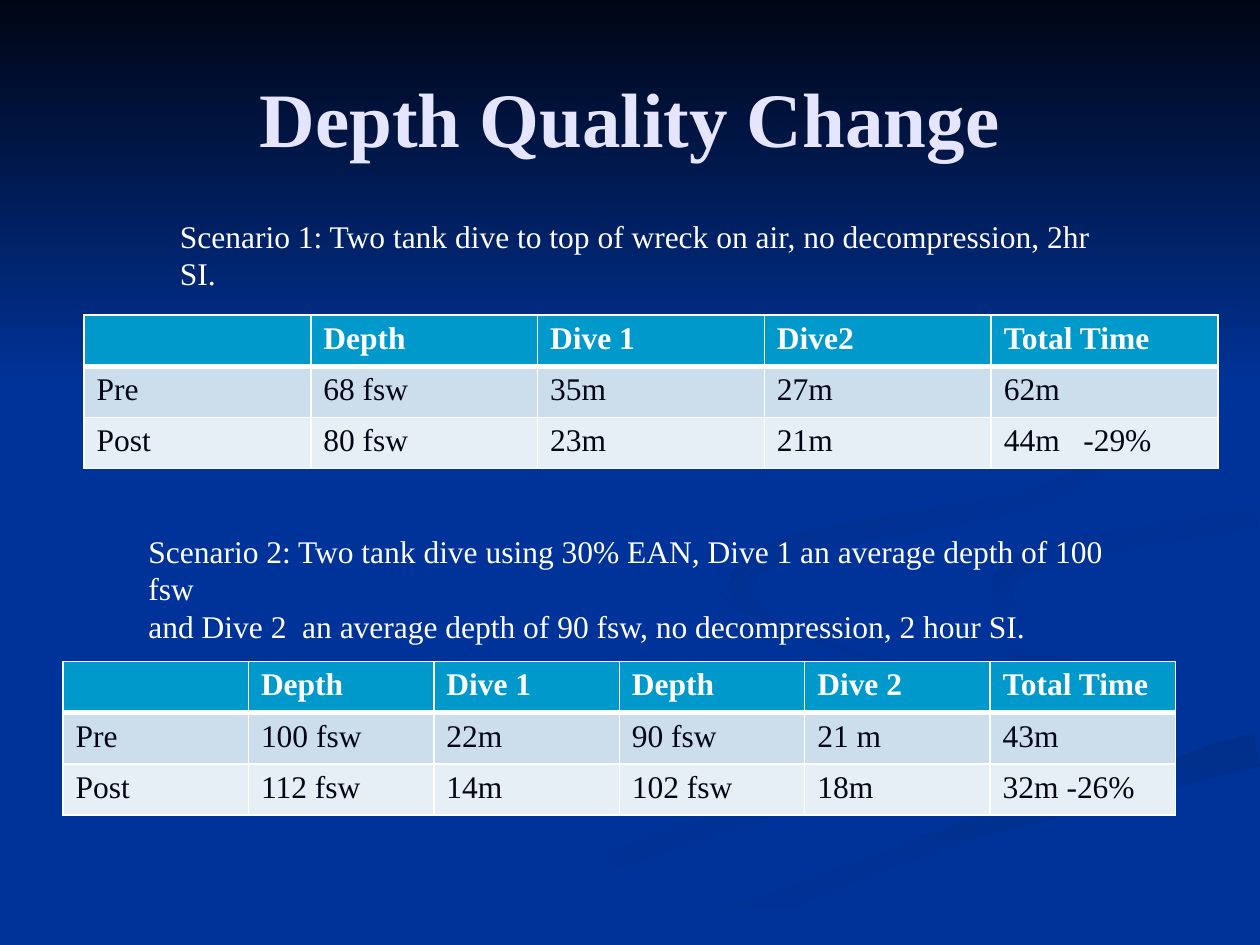
from math import hypot

from pptx import Presentation
from pptx.dml.color import RGBColor
from pptx.enum.shapes import MSO_SHAPE
from pptx.enum.text import MSO_ANCHOR, PP_ALIGN
from pptx.oxml import parse_xml
from pptx.oxml.ns import nsdecls
from pptx.util import Inches, Pt

WIDTH, HEIGHT = 10, 7.5
MARGIN = WIDTH * 0.05
FONT = "Times New Roman"
BODY_SIZE, TITLE_SIZE = 18, 44
SEA, NIGHT, WHITE, LAVENDER = "003399", "000514", "FFFFFF", "E5E5FF"
ROW_FILLS = ["0099CC", "CCDEEC", "E7EFF6"]
TABLE_HEIGHT = 1.22
THIN, THICK = 1, 3
CURVE_STEPS = 6

LOWER_SWIRL = [(5.75, 4.6, 0), (5.78, 4.76, 0.06), (6.4, 5.05, 0.06), (7.4, 5.39, 0.03),
               (7.9, 5.68, 0.12), (7.6, 6, 0.2), (5.5, 6.6, 0.18), (3.3, 7.45, 0.28)]
RIGHT_SWIRL = [(7.24, 4.64, 0), (7.35, 4.87, 0.05), (8.35, 5.27, 0.16),
               (9.1, 5.53, 0.2), (9.29, 5.78, 0.26), (8.94, 6.05, 0)]
CORNER_SWEEP = [(5.35, 7.47, 0.3), (7.1, 6.75, 0.25), (8.4, 6.36, 0.24), (9.98, 5.95, 0.28)]
SEA_SWEEP = [(9.98, 3.95, 0.15), (8.9, 4.11, 0.13), (7.7, 4.45, 0.4), (7.8, 4.85, 0.4),
             (9, 5.25, 0.25), (9.65, 5.65, 0.4), (8, 6.33, 0.12), (4.9, 7.45, 0.12)]
RIGHT_CURL = [(8.26, 4.96, 0), (7.95, 4.75, 0.16), (8.25, 4.42, 0.18), (9.98, 4.11, 0.18)]
UPPER_SWIRL = [(7.62, 2.33, 0), (8.7, 2.95, 0.08), (8.91, 3.4, 0.06), (8.3, 3.92, 0.16),
               (6.4, 4.31, 0.18), (5.86, 4.64, 0.16), (6.22, 5, 0)]
RIBBONS = [
    (LOWER_SWIRL, SEA, "003193", 0), (RIGHT_SWIRL, SEA, "003193", 45),
    (CORNER_SWEEP, "002F8C", SEA, 90), (SEA_SWEEP, SEA, SEA, 0),
    (RIGHT_CURL, "003091", SEA, 45), (UPPER_SWIRL, "002F8E", SEA, 45)]

AIR_DIVES = [
    ["", "Depth", "Dive 1", "Dive2", "Total Time"],
    ["Pre", "68 fsw", "35m", "27m", "62m"],
    ["Post", "80 fsw", "23m", "21m", "44m   -29%"]]
NITROX_DIVES = [
    ["", "Depth", "Dive 1", "Depth", "Dive 2", "Total Time"],
    ["Pre", "100 fsw", "22m", "90 fsw", "21 m", "43m"],
    ["Post", "112 fsw", "14m", "102 fsw", "18m", "32m -26%"]]


def colour(code):
    """Turn a hex string into a colour."""
    return RGBColor.from_string(code)


def paint(shape, start, end, angle):
    """Fill a shape with a clockwise-angled gradient, or plainly if its ends match."""
    shape.shadow.inherit = False
    shape.line.fill.background()
    if start == end:
        shape.fill.solid()
        shape.fill.fore_color.rgb = colour(start)
        return
    shape.fill.gradient()
    shape.fill.gradient_angle = (360 - angle) % 360
    for stop, code in zip(shape.fill.gradient_stops, (start, end)):
        stop.color.rgb = colour(code)


def blend(before, start, end, after, share):
    """Interpolate between start and end on a Catmull-Rom curve."""
    return start + share / 2 * (
        end - before
        + share * (2 * before - 5 * start + 4 * end - after)
        + share ** 2 * (3 * (start - end) + after - before))


def smooth(knots):
    """Return a curve through knots of x, y and thickness."""
    padded = [knots[0], *knots, knots[-1]]
    curve = [
        tuple(blend(*values, step / CURVE_STEPS) for values in zip(*padded[i:i + 4]))
        for i in range(len(knots) - 1) for step in range(CURVE_STEPS)]
    return [*curve, knots[-1]]


def ribbon_outline(knots):
    """Offset a centre curve to both sides and keep the outline on the slide."""
    curve = smooth(knots)
    left, right = [], []
    for i, (x, y, thickness) in enumerate(curve):
        before, after = curve[max(i - 1, 0)], curve[min(i + 1, len(curve) - 1)]
        run, rise = after[0] - before[0], after[1] - before[1]
        reach = max(thickness, 0) / 2 / hypot(run, rise)
        for edge, side in ((left, reach), (right, -reach)):
            edge.append((min(x - rise * side, WIDTH), min(y + run * side, HEIGHT)))
    return left + right[::-1]


def add_ribbon(page, knots, start, end, angle):
    """Draw one wave of the backdrop."""
    corners = [(Inches(x), Inches(y)) for x, y in ribbon_outline(knots)]
    builder = page.shapes.build_freeform(*corners[0])
    builder.add_line_segments(corners[1:], close=True)
    paint(builder.convert_to_shape(), start, end, angle)


def add_backdrop(page):
    """Set the sea colour, the waves and the dark band at the top."""
    page.background.fill.solid()
    page.background.fill.fore_color.rgb = colour(SEA)
    for ribbon in RIBBONS:
        add_ribbon(page, *ribbon)
    band = page.shapes.add_shape(
        MSO_SHAPE.RECTANGLE, 0, 0, Inches(WIDTH), Inches(HEIGHT * 0.41))
    paint(band, NIGHT, SEA, 90)


def add_span(para, text, size, code, bold=False):
    """Append one formatted run to a paragraph."""
    span = para.add_run()
    span.text = text
    span.font.name = FONT
    span.font.size = Pt(size)
    span.font.bold = bold
    span.font.color.rgb = colour(code)


def add_text(page, place, lines, size=BODY_SIZE, code=WHITE, bold=False,
             align=PP_ALIGN.LEFT, anchor=MSO_ANCHOR.TOP):
    """Add a wrapped text box with one paragraph per line."""
    frame = page.shapes.add_textbox(*map(Inches, place)).text_frame
    frame.word_wrap = True
    frame.vertical_anchor = anchor
    for number, line in enumerate(lines):
        para = frame.add_paragraph() if number else frame.paragraphs[0]
        para.alignment = align
        add_span(para, line, size, code, bold)


def add_border(cell, side, points):
    """Give one side of a cell a white line."""
    cell._tc.get_or_add_tcPr().append(parse_xml(
        f'<a:ln{side} {nsdecls("a")} w="{Pt(points)}"><a:solidFill>'
        f'<a:srgbClr val="{WHITE}"/></a:solidFill></a:ln{side}>'))


def add_dive_table(page, left, top, width, rows):
    """Add a table with a header row and shaded body rows."""
    place = map(Inches, (left, top, width, TABLE_HEIGHT))
    table = page.shapes.add_table(len(rows), len(rows[0]), *place).table
    for row, (texts, shade) in enumerate(zip(rows, ROW_FILLS)):
        header = row == 0
        for column, text in enumerate(texts):
            cell = table.cell(row, column)
            for side in "LRTB":
                under_header = (row, side) in ((0, "B"), (1, "T"))
                add_border(cell, side, THICK if under_header else THIN)
            cell.fill.solid()
            cell.fill.fore_color.rgb = colour(shade)
            if text:
                add_span(cell.text_frame.paragraphs[0], text, BODY_SIZE,
                         WHITE if header else NIGHT, header)


def main():
    """Build the slide and save it."""
    deck = Presentation()
    deck.slide_width, deck.slide_height = Inches(WIDTH), Inches(HEIGHT)
    page = deck.slides.add_slide(deck.slide_layouts[6])
    add_backdrop(page)
    add_text(page, (MARGIN, HEIGHT * 0.04, WIDTH - 2 * MARGIN, 1.25),
             ["Depth Quality Change"], TITLE_SIZE, LAVENDER, True,
             PP_ALIGN.CENTER, MSO_ANCHOR.MIDDLE)
    add_dive_table(page, WIDTH / 15, HEIGHT / 3, WIDTH * 0.9, AIR_DIVES)
    add_text(page, (1.33, 1.67, 7.58, 0.4), [
        "Scenario 1: Two tank dive to top of wreck on air, no decompression, 2hr SI."])
    add_text(page, (1.08, 4.17, 8.13, 0.71), [
        "Scenario 2: Two tank dive using 30% EAN, Dive 1 an average depth of 100 fsw",
        "and Dive 2  an average depth of 90 fsw, no decompression, 2 hour SI."])
    add_dive_table(page, MARGIN, HEIGHT * 0.7, 8.83, NITROX_DIVES)
    deck.save("out.pptx")


if __name__ == "__main__":
    main()
